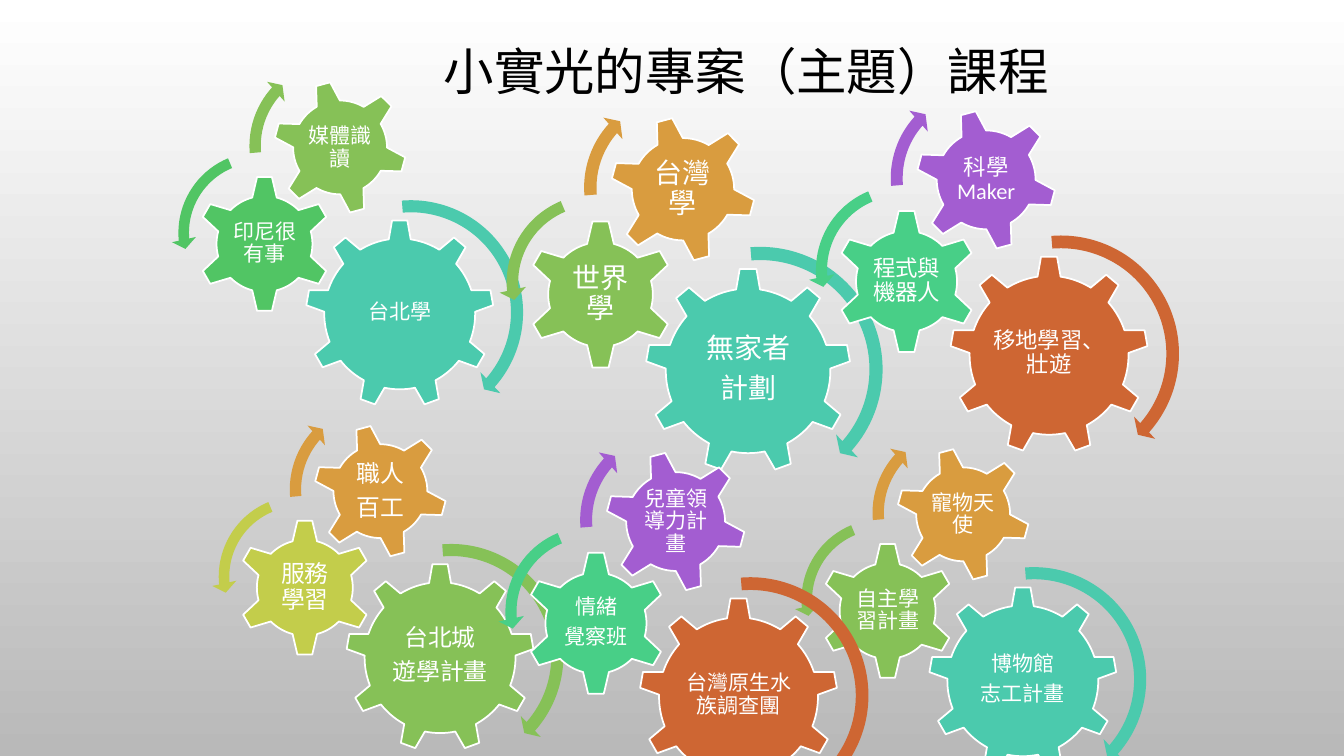
from dataclasses import dataclass

from pptx import Presentation
from pptx.dml.color import RGBColor
from pptx.enum.shapes import MSO_SHAPE
from pptx.enum.text import MSO_ANCHOR, PP_ALIGN
from pptx.util import Inches, Pt

CENTER, MIDDLE = PP_ALIGN.CENTER, MSO_ANCHOR.MIDDLE
GEAR_6, GEAR_9 = MSO_SHAPE.GEAR_6, MSO_SHAPE.GEAR_9
ARROW, LEFT_ARROW = MSO_SHAPE.CIRCULAR_ARROW, MSO_SHAPE.LEFT_CIRCULAR_ARROW


@dataclass(frozen=True)
class Theme:
    font: str = "Calibri"
    title_size: int = 36
    title: str = "000000"
    light: str = "FFFFFF"
    shade: str = "B9B9B9"
    teal: str = "4BCAAD"
    green: str = "51C564"
    leaf: str = "86C157"
    mint: str = "48CF87"
    lime: str = "C3CD4B"
    amber: str = "D99C3F"
    rust: str = "CE6633"
    purple: str = "A35DD1"


theme = Theme()
TITLE = "小實光的專案（主題）課程"

# Large gear's left, top and size; type size; (label, colour) of large, middle and upper gear
CLUSTERS = [
    (3.03, 2.18, 1.87, 15,
     [("台北學", theme.teal), ("印尼很有事", theme.green), ("媒體識讀", theme.leaf)]),
    (6.4, 2.66, 2.04, 20,
     [("無家者\n計劃", theme.teal), ("世界學", theme.leaf), ("台灣學", theme.amber)]),
    (9.42, 2.54, 1.97, 16,
     [("移地學習、壯遊", theme.rust), ("程式與機器人", theme.mint), ("科學Maker", theme.purple)]),
    (3.43, 5.59, 1.87, 17,
     [("台北城\n遊學計畫", theme.leaf), ("服務學習", theme.lime), ("職人\n百工", theme.amber)]),
    (9.21, 5.82, 1.87, 15,
     [("博物館\n志工計畫", theme.teal), ("自主學習計畫", theme.leaf), ("寵物天使", theme.amber)]),
    (6.34, 5.93, 1.97, 15,
     [("台灣原生水族調查團", theme.rust), ("情緒\n覺察班", theme.mint), ("兒童領導力計畫", theme.purple)]),
]

# Left, top, width, height in units of the large gear's size
GEARS = [  # preset, rotation, gear frame, label frame
    (GEAR_9, 0, (0, 0, 1, 1), (0.201, 0.235, 0.598, 0.514)),
    (GEAR_6, 0, (-0.581, -0.235, 0.727, 0.727), (-0.397, -0.052, 0.36, 0.36)),
    (GEAR_6, 345, (-0.172, -0.739, 0.711, 0.711), (-0.017, -0.582, 0.401, 0.401)),
]
ARROWS = [  # preset, frame, adjustments
    (ARROW, (-0.081, -0.148, 1.28, 1.28), (0.05, 2.99, 24.87, 159.25, 0.06)),
    (LEFT_ARROW, (-0.711, -0.396, 0.931, 0.931), (0.06, 4.3, 104.89, 148.38, 0.07)),
    (ARROW, (-0.337, -0.892, 1, 1), (0.06, 3.94, 133.14, 105.08, 0.07)),
]


def rgb(color):
    return RGBColor.from_string(color)


def style_paragraph(para, size, color):
    para.alignment = CENTER
    para.line_spacing = 0.9
    para.font.name = theme.font
    para.font.size = Pt(size)
    para.font.color.rgb = rgb(color)


def add_filled(group, preset, frame, color):
    shape = group.shapes.add_shape(preset, *frame)
    shape.shadow.inherit = False
    shape.fill.solid()
    shape.fill.fore_color.rgb = rgb(color)
    shape.line.fill.background()
    return shape


def add_gear(group, preset, rotation, frame, color):
    gear = add_filled(group, preset, frame, color)
    gear.rotation = rotation
    gear.line.color.rgb = rgb(theme.light)
    gear.line.width = Pt(1.25)


def add_label(group, frame, text, size):
    text_frame = group.shapes.add_textbox(*frame).text_frame
    text_frame.word_wrap = True
    text_frame.vertical_anchor = MIDDLE
    inset = Pt(size * 0.1)
    text_frame.margin_left = text_frame.margin_right = inset
    text_frame.margin_top = text_frame.margin_bottom = inset
    text_frame.text = text
    for para in text_frame.paragraphs:
        style_paragraph(para, size, theme.light)
        para.space_after = Pt(size * 0.35)


def add_cluster(page, left, top, unit, size, items):
    """Draw three meshing gears with labels, then their turning arrows."""
    def place(frame):
        x, y, width, height = frame
        return [Inches(n) for n in (left + x * unit, top + y * unit, width * unit, height * unit)]

    group = page.shapes.add_group_shape()
    for (preset, rotation, frame, label_frame), (text, color) in zip(GEARS, items):
        add_gear(group, preset, rotation, place(frame), color)
        add_label(group, place(label_frame), text, size)
    for (preset, frame, adjustments), (_, color) in zip(ARROWS, items):
        arrow = add_filled(group, preset, place(frame), color)
        for index, value in enumerate(adjustments):
            arrow.adjustments[index] = value


def set_background(page):
    fill = page.background.fill
    fill.gradient()
    fill.gradient_angle = 270
    for stop, color, position in zip(fill.gradient_stops, (theme.light, theme.shade), (0, 1)):
        stop.color.rgb = rgb(color)
        stop.position = position


def add_title(page):
    title = page.shapes.title
    title.left, title.top = Inches(1.4), Inches(0.11)
    title.width, title.height = Inches(12), Inches(1.25)
    title.text_frame.text = TITLE
    title.text_frame.vertical_anchor = MIDDLE
    style_paragraph(title.text_frame.paragraphs[0], theme.title_size, theme.title)


def main():
    deck = Presentation()
    deck.slide_width, deck.slide_height = Inches(13.33), Inches(7.5)
    page = deck.slides.add_slide(deck.slide_layouts[5])
    set_background(page)
    add_title(page)
    for cluster in CLUSTERS:
        add_cluster(page, *cluster)
    deck.save("out.pptx")


if __name__ == "__main__":
    main()
